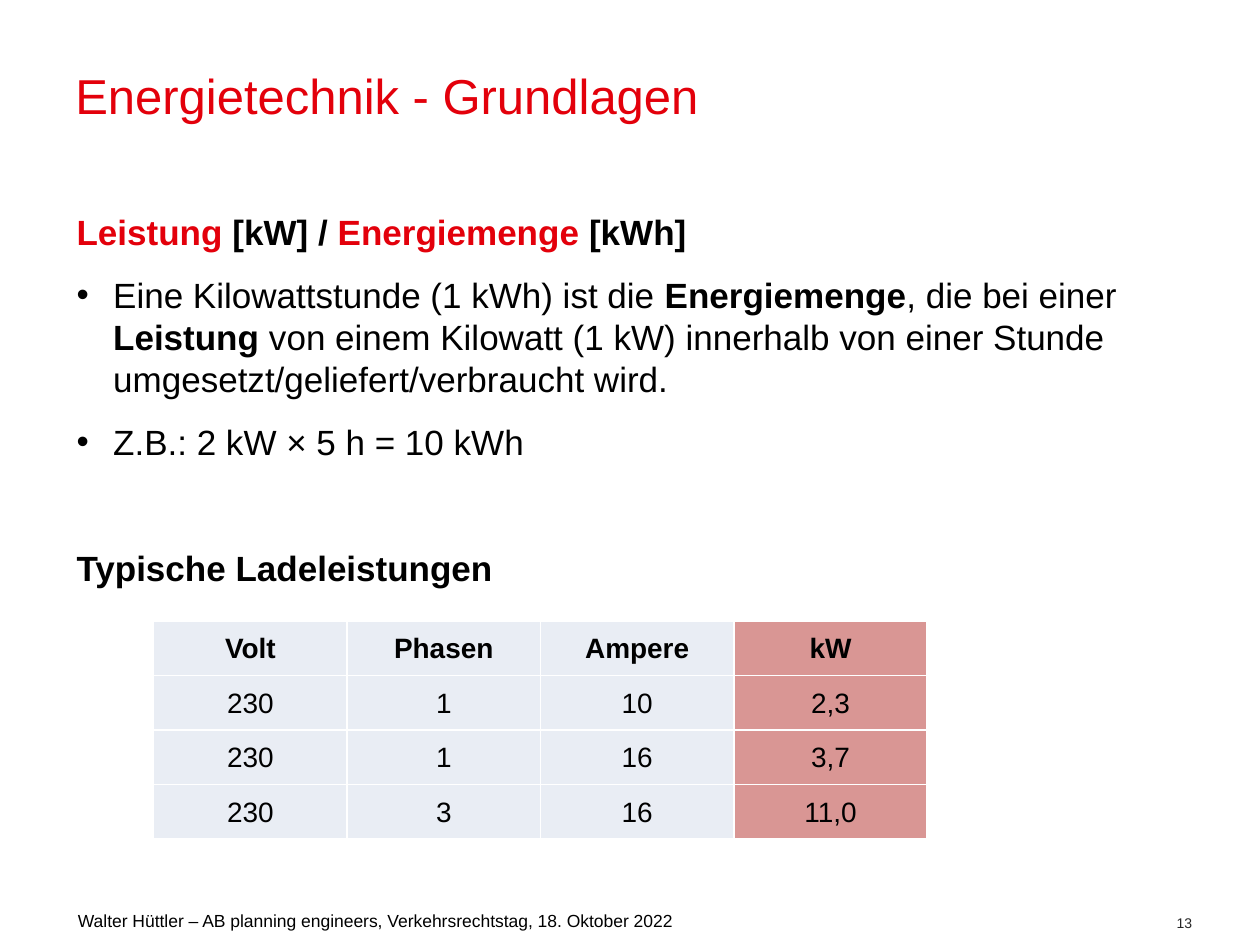
from lxml.etree import SubElement
from pptx import Presentation
from pptx.dml.color import RGBColor
from pptx.enum.text import MSO_ANCHOR, PP_ALIGN
from pptx.oxml.ns import qn
from pptx.util import Inches, Pt

RED = RGBColor(0xE3, 0x00, 0x0B)
BLACK = RGBColor(0, 0, 0)
GREY = RGBColor(0x26, 0x26, 0x26)
PALE = RGBColor(0xE9, 0xED, 0xF4)
ROSE = RGBColor(0xD9, 0x96, 0x94)
WIDTH, HEIGHT = 10, 7.5
INDENT = 0.29

TITLE = "Energietechnik - Grundlagen"
FOOTER = "Walter Hüttler – AB planning engineers, Verkehrsrechtstag, 18. Oktober 2022"
NUMBER = "13"
BODY = [
    {"runs": [("Leistung ", True, RED), ("[kW] / ", True),
              ("Energiemenge ", True, RED), ("[kWh]", True)]},
    {"runs": [("Eine Kilowattstunde (1 kWh) ist die", False),
              (" Energiemenge", True), (", die bei einer ", False),
              ("Leistung", True),
              (" von einem Kilowatt (1 kW) innerhalb von einer Stunde "
               "umgesetzt/geliefert/verbraucht wird.", False)],
     "before": 12, "bullet": True},
    {"runs": [("Z.B.: 2 kW × 5 h = 10 kWh", False)], "before": 12, "bullet": True},
    {"runs": [("Typische Ladeleistungen", True)], "before": 48},
]
ROWS = [
    ("Volt", "Phasen", "Ampere", "kW"),
    ("230", "1", "10", "2,3"),
    ("230", "1", "16", "3,7"),
    ("230", "3", "16", "11,0"),
]
GRID = {"left": 1.22, "top": 4.93, "col": 1.535, "row": 0.4325}


def write(para, runs, size=20, color=BLACK, align=PP_ALIGN.LEFT,
          before=0, line=None, bullet=False):
    para.alignment = align
    para.space_before = Pt(before)
    if line:
        para.line_spacing = Pt(line)
    if bullet:
        props = para._p.get_or_add_pPr()
        props.set("marL", str(Inches(INDENT)))
        props.set("indent", str(-Inches(INDENT)))
        SubElement(props, qn("a:buFont"), typeface="Arial")
        SubElement(props, qn("a:buChar"), char="•")
    for text, bold, *tint in runs:
        run = para.add_run()
        run.text = text
        run.font.name = "Arial"
        run.font.size = Pt(size)
        run.font.bold = bold
        run.font.color.rgb = tint[0] if tint else color


def add_box(slide, area, anchor=MSO_ANCHOR.TOP):
    frame = slide.shapes.add_textbox(*map(Inches, area)).text_frame
    frame.word_wrap = True
    frame.vertical_anchor = anchor
    return frame


def edge(cell):
    props = cell._tc.get_or_add_tcPr()
    for side in ("lnL", "lnR", "lnT", "lnB"):
        rule = SubElement(props, qn(f"a:{side}"), w=str(Pt(1)))
        fill = SubElement(rule, qn("a:solidFill"))
        SubElement(fill, qn("a:srgbClr"), val="FFFFFF")


def add_grid(slide):
    rows, cols = len(ROWS), len(ROWS[0])
    area = (GRID["left"], GRID["top"], cols * GRID["col"], rows * GRID["row"])
    table = slide.shapes.add_table(rows, cols, *map(Inches, area)).table
    table.horz_banding = False
    for r, row in enumerate(ROWS):
        for c, value in enumerate(row):
            cell = table.cell(r, c)
            edge(cell)
            cell.fill.solid()
            cell.fill.fore_color.rgb = ROSE if c == cols - 1 else PALE
            cell.vertical_anchor = MSO_ANCHOR.MIDDLE
            cell.margin_left = cell.margin_right = cell.margin_top = Inches(0.01)
            cell.margin_bottom = 0
            write(cell.text_frame.paragraphs[0], [(value, r == 0)],
                  size=16, align=PP_ALIGN.CENTER)


def main():
    deck = Presentation()
    deck.slide_width, deck.slide_height = Inches(WIDTH), Inches(HEIGHT)
    slide = deck.slides.add_slide(deck.slide_layouts[6])

    foot = add_box(slide, (0.52, 7.17, 6.29, 0.27))
    write(foot.paragraphs[0], [(FOOTER, False)], size=10)
    head = add_box(slide, (0.5, 0.36, 9.07, 0.79), MSO_ANCHOR.MIDDLE)
    write(head.paragraphs[0], [(TITLE, False)], size=28, color=RED)
    page = add_box(slide, (7.23, 7.15, 2.33, 0.35), MSO_ANCHOR.MIDDLE)
    write(page.paragraphs[0], [(NUMBER, False)], size=8, color=GREY,
          align=PP_ALIGN.RIGHT)

    body = add_box(slide, (0.51, 1.62, 9.06, 5.35))
    for i, item in enumerate(BODY):
        para = body.add_paragraph() if i else body.paragraphs[0]
        write(para, line=24, **item)
    add_grid(slide)
    deck.save("out.pptx")


if __name__ == "__main__":
    main()
